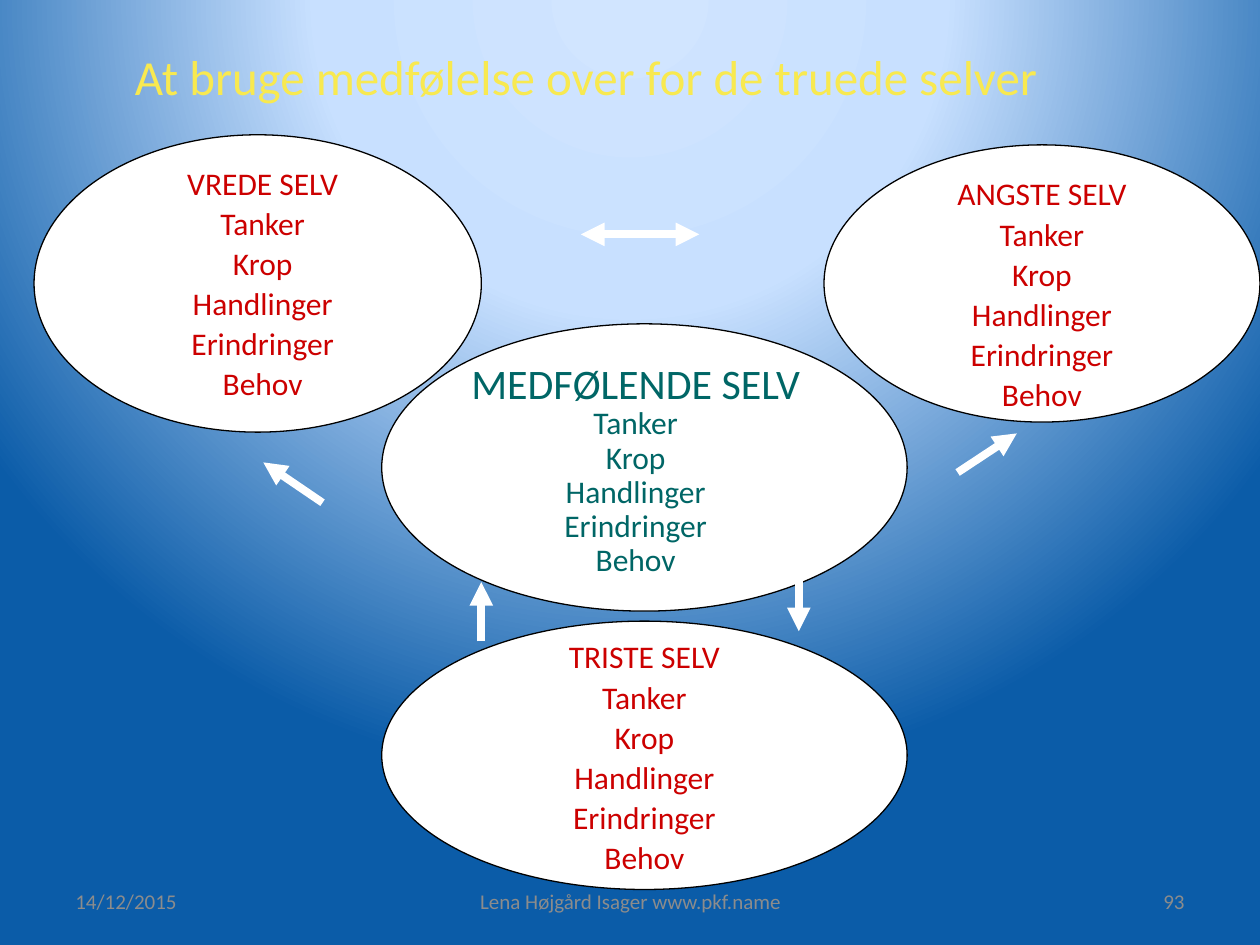
from dataclasses import dataclass
from typing import NamedTuple, Optional

from lxml import etree
from pptx import Presentation
from pptx.dml.color import RGBColor
from pptx.enum.shapes import MSO_CONNECTOR, MSO_SHAPE
from pptx.enum.text import MSO_ANCHOR, MSO_AUTO_SIZE, PP_ALIGN
from pptx.oxml import parse_xml
from pptx.oxml.ns import nsdecls, qn
from pptx.util import Inches, Pt

OVAL, LINE = MSO_SHAPE.OVAL, MSO_CONNECTOR.STRAIGHT
LEFT, MID, RIGHT = PP_ALIGN.LEFT, PP_ALIGN.CENTER, PP_ALIGN.RIGHT
TOP, CENTRE = MSO_ANCHOR.TOP, MSO_ANCHOR.MIDDLE
FIXED = MSO_AUTO_SIZE.NONE

# The slide is a grid of 100 columns by 75 rows
WIDE, HIGH = Inches(10), Inches(7.5)
COL, ROW = WIDE / 100, HIGH / 75


@dataclass(frozen=True)
class Theme:
    font: str = "Calibri"
    white: str = "FFFFFF"
    black: str = "000000"
    red: str = "CC0000"
    green: str = "006666"
    gold: str = "F8E950"
    grey: str = "8C8C8C"
    glow: tuple = ((0, "D1E5FF"), (40, "C8E0FF"), (100, "0B5CA8"))
    title: int = 28
    head: int = 24
    body: int = 18
    foot: int = 12
    edge: float = 0.75
    arrow: float = 4.5
    gap: float = 8.8


class Box(NamedTuple):
    x: float
    y: float
    w: float
    h: float


@dataclass(frozen=True)
class Part:
    """One self: its oval, and a separate text box if it has one."""
    name: str
    oval: Box
    text: Optional[Box] = None
    color: str = Theme.red
    size: int = Theme.body
    tight: float = 0.65
    drop: float = 0


class Arrow(NamedTuple):
    x1: float
    y1: float
    x2: float
    y2: float
    both: bool = False


class Foot(NamedTuple):
    text: str
    box: Box
    align: PP_ALIGN


THEME = Theme()
TITLE = "At bruge medfølelse over for de truede selver"
TITLE_BOX = Box(9.7, 3.2, 78.1, 5.7)
ITEMS = ["Tanker", "Krop", "Handlinger", "Erindringer", "Behov"]
PARTS = [
    Part("VREDE SELV", Box(2.7, 10.7, 35.5, 23.6), Box(3.1, 13.5, 35.5, 27.4)),
    Part("ANGSTE SELV", Box(65.4, 11.5, 34.6, 22), drop=1.4),
    Part("TRISTE SELV", Box(30.3, 49.3, 41.7, 21.3)),
    Part("MEDFØLENDE SELV", Box(30.3, 25.7, 41.7, 22.8),
         Box(33.5, 29.6, 33.9, 21.2), THEME.green, THEME.head, 0.5),
]
ARROWS = [
    Arrow(63.4, 45.4, 63.4, 50.1),
    Arrow(38.2, 50.9, 38.2, 46.2),
    Arrow(25.6, 39.9, 20.9, 36.7),
    Arrow(76, 37.5, 80.7, 34.4),
    Arrow(46.1, 18.6, 55.5, 18.6, both=True),
]
FEET = [
    Foot("14/12/2015", Box(5, 69.5, 23.3, 4), LEFT),
    Foot("Lena Højgård Isager www.pkf.name", Box(34.2, 69.5, 31.7, 4), MID),
    Foot("93", Box(71.7, 69.5, 23.3, 4), RIGHT),
]


def place(box: Box) -> tuple:
    return (round(box.x * COL), round(box.y * ROW),
            round(box.w * COL), round(box.h * ROW))


def write(frame, text: str, *, size: float, color: str, align=LEFT,
          first: bool = True, tight: Optional[float] = None, gap: float = 0):
    """Write one paragraph into a text frame."""
    para = frame.paragraphs[0] if first else frame.add_paragraph()
    para.alignment = align
    para.space_before = Pt(gap)
    if tight:
        para.line_spacing = tight
    run = para.add_run()
    run.text = text
    run.font.name = THEME.font
    run.font.size = Pt(size)
    run.font.color.rgb = RGBColor.from_string(color)


def set_frame(frame, anchor=TOP, wrap: bool = True):
    frame.auto_size = FIXED
    frame.word_wrap = wrap
    frame.vertical_anchor = anchor
    return frame


def add_box(slide, box: Box, anchor=TOP):
    return set_frame(slide.shapes.add_textbox(*place(box)).text_frame, anchor)


def add_glow(slide):
    """Fill the background with a round gradient centred above the slide."""
    stops = "".join(
        f'<a:gs pos="{pos * 1000}"><a:srgbClr val="{color}"/></a:gs>'
        for pos, color in THEME.glow)
    slide.background.fill.solid()
    solid = next(slide.element.iter(qn("a:solidFill")))
    solid.getparent().replace(solid, parse_xml(
        f'<a:gradFill {nsdecls("a")} rotWithShape="1"><a:gsLst>{stops}</a:gsLst>'
        '<a:path path="circle"><a:fillToRect l="50000" t="-80000" '
        'r="50000" b="180000"/></a:path></a:gradFill>'))


def add_part(slide, part: Part):
    oval = slide.shapes.add_shape(OVAL, *place(part.oval))
    oval.shadow.inherit = False
    oval.fill.solid()
    oval.fill.fore_color.rgb = RGBColor.from_string(THEME.white)
    oval.line.color.rgb = RGBColor.from_string(THEME.black)
    oval.line.width = Pt(THEME.edge)
    if part.text:
        frame = add_box(slide, part.text)
    else:
        frame = set_frame(oval.text_frame, CENTRE, wrap=False)
        frame.margin_top, frame.margin_bottom = round(part.drop * ROW), 0
    write(frame, part.name, size=part.size, color=part.color, align=MID,
          tight=part.tight if part.text else None)
    for item in ITEMS:
        write(frame, item, size=THEME.body, color=part.color, align=MID,
              first=False, tight=part.tight, gap=THEME.gap)


def add_arrow(slide, arrow: Arrow):
    line = slide.shapes.add_connector(
        LINE, round(arrow.x1 * COL), round(arrow.y1 * ROW),
        round(arrow.x2 * COL), round(arrow.y2 * ROW))
    line.line.color.rgb = RGBColor.from_string(THEME.white)
    line.line.width = Pt(THEME.arrow)
    props = line.line._get_or_add_ln()
    for end in ("a:headEnd", "a:tailEnd") if arrow.both else ("a:tailEnd",):
        etree.SubElement(props, qn(end), type="triangle")
    etree.SubElement(props.getparent(), qn("a:effectLst"))


def main():
    deck = Presentation()
    deck.slide_width, deck.slide_height = WIDE, HIGH
    slide = deck.slides.add_slide(deck.slide_layouts[5])
    add_glow(slide)

    # Title
    title = slide.shapes.title
    title.left, title.top, title.width, title.height = place(TITLE_BOX)
    write(set_frame(title.text_frame), TITLE, size=THEME.title,
          color=THEME.gold)

    # The four selves and the arrows between them
    for part in PARTS:
        add_part(slide, part)
    for arrow in ARROWS:
        add_arrow(slide, arrow)

    # Footer
    for foot in FEET:
        write(add_box(slide, foot.box, CENTRE), foot.text, size=THEME.foot,
              color=THEME.grey, align=foot.align)
    deck.save("out.pptx")


if __name__ == "__main__":
    main()
